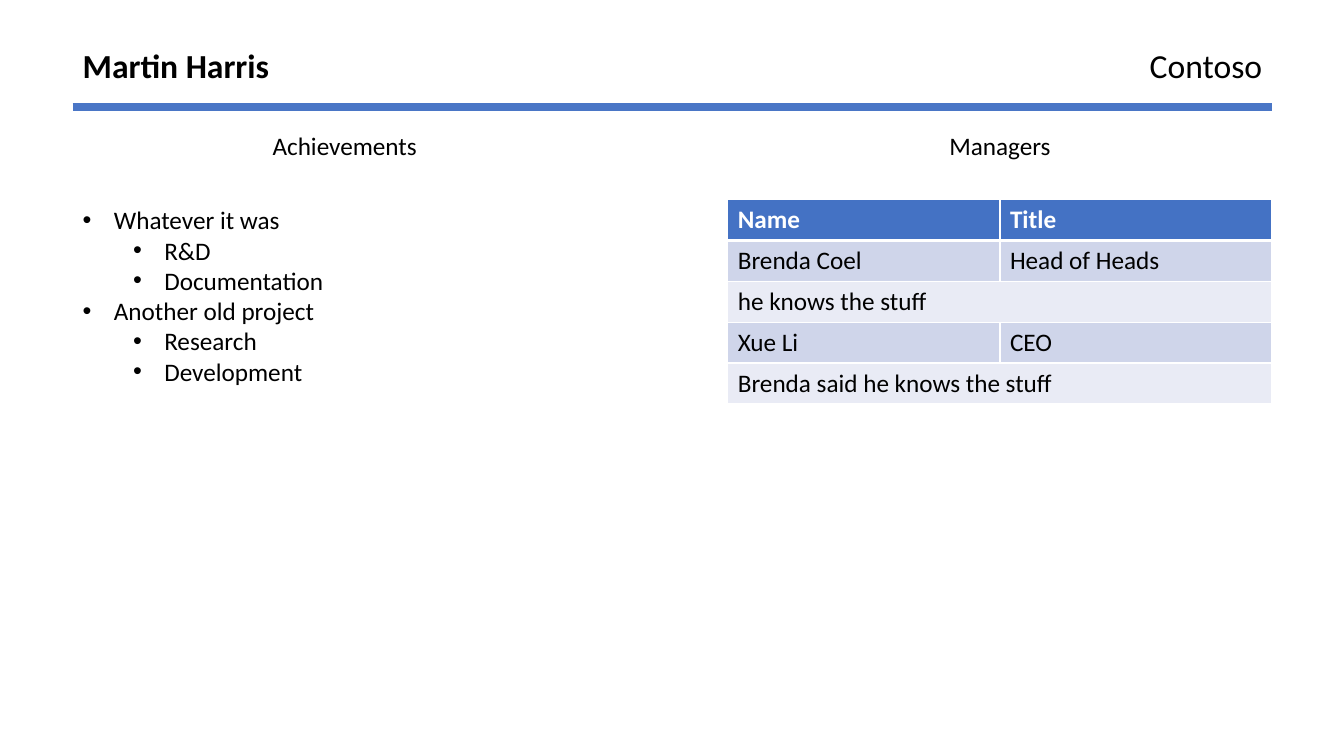
from dataclasses import dataclass

from lxml.etree import SubElement
from pptx import Presentation
from pptx.dml.color import RGBColor
from pptx.enum.shapes import MSO_CONNECTOR
from pptx.enum.text import MSO_ANCHOR, MSO_AUTO_SIZE, PP_ALIGN
from pptx.oxml.ns import qn
from pptx.util import Emu, Inches, Pt

FONT = "Calibri"
BLACK, WHITE = "000000", "FFFFFF"
BLUE, RULE_BLUE = "4472C4", "4A76C6"
BANDS = ("CFD5EA", "E9EBF5")
LEFT, RIGHT, COL_W = 0.72, 7.22, 5.4
HEAD_Y, RULE_Y, LABEL_Y, BODY_Y = 0.4, 1.06, 1.24, 1.98
ROW_H = 0.405


@dataclass(frozen=True)
class Label:
    text: str
    x: float
    y: float
    height: float
    size: int
    align: PP_ALIGN


@dataclass(frozen=True)
class Bullet:
    text: str
    level: int = 0


LABELS = [
    Label("Contoso", RIGHT, HEAD_Y, 0.5, 24, PP_ALIGN.RIGHT),
    Label("Achievements", LEFT, LABEL_Y, 0.4, 18, PP_ALIGN.CENTER),
    Label("Managers", RIGHT, LABEL_Y, 0.4, 18, PP_ALIGN.CENTER),
]
ACHIEVEMENTS = [
    Bullet("Whatever it was"),
    Bullet("R&D", 1),
    Bullet("Documentation", 1),
    Bullet("Another old project"),
    Bullet("Research", 1),
    Bullet("Development", 1),
]
# A row with one entry spans both columns.
MANAGERS = [
    ("Name", "Title"),
    ("Brenda Coel", "Head of Heads"),
    ("he knows the stuff",),
    ("Xue Li", "CEO"),
    ("Brenda said he knows the stuff",),
]


def rgb(color: str) -> RGBColor:
    return RGBColor.from_string(color)


def set_attrs(obj, values: dict) -> None:
    for name, value in values.items():
        setattr(obj, name, value)


def place(sp, x: float, y: float, height: float) -> None:
    """Put a text shape in a column and give its frame the common settings."""
    set_attrs(sp, {"left": Inches(x), "top": Inches(y),
                   "width": Inches(COL_W), "height": Inches(height)})
    set_attrs(sp.text_frame, {"word_wrap": True, "auto_size": MSO_AUTO_SIZE.NONE,
                              "vertical_anchor": MSO_ANCHOR.TOP})


def write(p, text: str, size: int = 18, color: str = BLACK, bold: bool = False,
          align: PP_ALIGN = PP_ALIGN.LEFT) -> None:
    set_attrs(p, {"alignment": align, "space_before": Pt(0)})
    r = p.add_run()
    r.text = text
    set_attrs(r.font, {"name": FONT, "size": Pt(size), "bold": bold})
    r.font.color.rgb = rgb(color)


def add_label(slide, label: Label) -> None:
    sp = slide.shapes.add_textbox(0, 0, 0, 0)
    place(sp, label.x, label.y, label.height)
    write(sp.text_frame.paragraphs[0], label.text, label.size, align=label.align)


def fill_bullets(sp, bullets: list[Bullet]) -> None:
    tf = sp.text_frame
    for i, bullet in enumerate(bullets):
        p = tf.add_paragraph() if i else tf.paragraphs[0]
        p.level = bullet.level
        write(p, bullet.text)
        pPr = p._p.get_or_add_pPr()
        pPr.set("marL", str(Inches(0.31 + 0.5 * bullet.level)))
        pPr.set("indent", str(Inches(-0.31)))
        SubElement(pPr, qn("a:buFont"), typeface="Arial")
        SubElement(pPr, qn("a:buChar"), char="•")


def set_borders(cell, top: int, bottom: int) -> None:
    tcPr = cell._tc.get_or_add_tcPr()
    for i, (side, width) in enumerate(zip("LRTB", (1, 1, top, bottom))):
        ln = SubElement(tcPr, qn(f"a:ln{side}"), w=str(Pt(width)))
        SubElement(SubElement(ln, qn("a:solidFill")), qn("a:srgbClr"), val=WHITE)
        tcPr.insert(i, ln)


def add_managers_table(slide) -> None:
    n_rows, n_cols = len(MANAGERS), len(MANAGERS[0])
    table = slide.shapes.add_table(
        n_rows, n_cols, Inches(RIGHT), Inches(BODY_Y),
        Inches(COL_W), Inches(ROW_H * n_rows)).table
    for i, texts in enumerate(MANAGERS):
        header = i == 0
        if len(texts) < n_cols:
            table.cell(i, 0).merge(table.cell(i, n_cols - 1))
        for j in range(n_cols):
            cell = table.cell(i, j)
            cell.fill.solid()
            cell.fill.fore_color.rgb = rgb(BLUE if header else BANDS[(i - 1) % 2])
            set_borders(cell, 3 if i == 1 else 1, 3 if header else 1)
            if j < len(texts):
                write(cell.text_frame.paragraphs[0], texts[j],
                      color=WHITE if header else BLACK, bold=header)


def add_rule(slide) -> None:
    y = Inches(RULE_Y)
    rule = slide.shapes.add_connector(
        MSO_CONNECTOR.STRAIGHT, Inches(LEFT), y, Inches(RIGHT + COL_W), y)
    rule.line.color.rgb = rgb(RULE_BLUE)
    rule.line.width = Pt(6)
    SubElement(rule._element.spPr, qn("a:effectLst"))


def main() -> None:
    prs = Presentation()
    set_attrs(prs, {"slide_width": Emu(12192000), "slide_height": Inches(7.5)})
    slide = prs.slides.add_slide(prs.slide_layouts[1])
    title, body = slide.placeholders

    place(title, LEFT, HEAD_Y, 0.5)
    write(title.text_frame.paragraphs[0], "Martin Harris", 24, bold=True)
    place(body, LEFT, BODY_Y, 1.9)
    fill_bullets(body, ACHIEVEMENTS)
    for label in LABELS:
        add_label(slide, label)
    add_managers_table(slide)
    add_rule(slide)
    prs.save("out.pptx")


if __name__ == "__main__":
    main()
